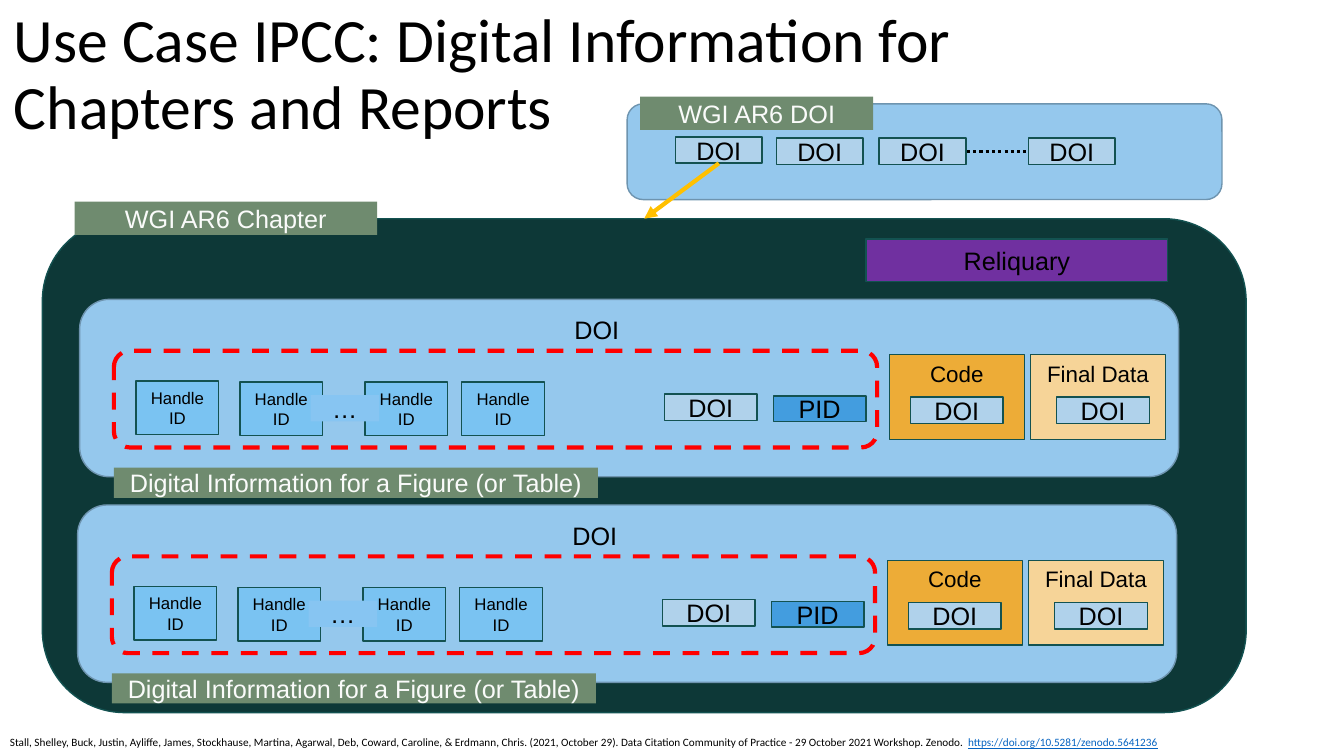
"""Build the slide on digital information for IPCC chapters and reports."""
from dataclasses import dataclass

from lxml.etree import SubElement
from pptx import Presentation
from pptx.dml.color import RGBColor
from pptx.enum.dml import MSO_LINE_DASH_STYLE as Dash
from pptx.enum.shapes import MSO_CONNECTOR, MSO_SHAPE
from pptx.enum.text import MSO_ANCHOR as Anchor, PP_ALIGN as Align
from pptx.oxml.ns import qn
from pptx.util import Inches, Pt

COLORS = {
    "black": "000000",
    "label_text": "FAFBFA",
    "label": "6F8B6F",
    "chapter": "0D3837",
    "edge": "135251",
    "panel": "95C8ED",
    "panel_edge": "6E94AF",
    "doi": "B0D2EB",
    "pid": "439DDF",
    "handle": "7AC3F2",
    "ellipsis": "87C5F2",
    "code": "EDAC37",
    "data": "F6D498",
    "reliquary": "7030A0",
    "dashed": "FF0000",
    "arrow": "FFC000",
    "link": "0563C1",
}


@dataclass(frozen=True)
class Box:
    left: float
    top: float
    width: float
    height: float
    fill: str | None
    text: str = ""
    edge: str | None = "edge"
    size: float = 18
    color: str = "black"
    rounded: bool = False
    anchor: Anchor = Anchor.MIDDLE
    dashed: bool = False


def rgb(name: str) -> RGBColor:
    return RGBColor.from_string(COLORS[name])


def add_span(para, text: str, *, size: float, font: str = "Arial",
             color: str = "black", underline: bool = False) -> None:
    span = para.add_run()
    span.text = text
    span.font.size = Pt(size)
    span.font.name = font
    span.font.color.rgb = rgb(color)
    if underline:
        span.font.underline = True


def draw_box(page, box: Box, dx: float = 0, dy: float = 0) -> None:
    kind = MSO_SHAPE.ROUNDED_RECTANGLE if box.rounded else MSO_SHAPE.RECTANGLE
    shape = page.shapes.add_shape(kind, Inches(box.left + dx), Inches(box.top + dy),
                                  Inches(box.width), Inches(box.height))
    shape.shadow.inherit = False
    if box.fill:
        shape.fill.solid()
        shape.fill.fore_color.rgb = rgb(box.fill)
    else:
        shape.fill.background()
    if box.edge:
        shape.line.color.rgb = rgb(box.edge)
        shape.line.width = Pt(3 if box.dashed else 1)
        if box.dashed:
            shape.line.dash_style = Dash.DASH
    else:
        shape.line.fill.background()
    if box.text:
        frame = shape.text_frame
        frame.word_wrap = True
        frame.vertical_anchor = box.anchor
        para = frame.paragraphs[0]
        para.alignment = Align.CENTER
        add_span(para, box.text, size=box.size, color=box.color)


def draw_line(page, start: tuple[float, float], end: tuple[float, float], color: str,
              width: float, *, dotted: bool = False, arrow: bool = False) -> None:
    line = page.shapes.add_connector(MSO_CONNECTOR.STRAIGHT,
                                     *map(Inches, start), *map(Inches, end))
    line.line.color.rgb = rgb(color)
    line.line.width = Pt(width)
    if dotted:
        line.line.dash_style = Dash.ROUND_DOT
    if arrow:
        SubElement(line.line._get_or_add_ln(), qn("a:tailEnd"), type="triangle")
    SubElement(line._element.spPr, qn("a:effectLst"))


def add_text_box(page, left: float, top: float, width: float, height: float,
                 anchor: Anchor = Anchor.TOP):
    box = page.shapes.add_textbox(Inches(left), Inches(top), Inches(width), Inches(height))
    box.text_frame.word_wrap = True
    box.text_frame.vertical_anchor = anchor
    return box.text_frame.paragraphs[0]


def label(left: float, top: float, width: float, height: float, text: str) -> Box:
    return Box(left, top, width, height, "label", text, edge=None, color="label_text")


def panel(left: float, top: float, width: float, height: float) -> Box:
    return Box(left, top, width, height, "panel", edge="panel_edge", rounded=True)


def doi(left: float, top: float, width: float = 0.92) -> Box:
    return Box(left, top, width, 0.26, "doi", "DOI")


def handle(left: float, top: float = 3.79) -> Box:
    return Box(left, top, 0.82, 0.53, "handle", "Handle ID", size=12)


def product(left: float, fill: str, text: str) -> Box:
    return Box(left, 3.52, 1.34, 0.84, fill, text, size=16, anchor=Anchor.TOP)


CHAPTER = Box(0.42, 2.17, 11.94, 4.9, "chapter", rounded=True)
CHAPTER_LABEL = label(0.74, 2, 3, 0.33, "WGI AR6 Chapter")
RELIQUARY = Box(8.59, 2.37, 2.99, 0.42, "reliquary", "Reliquary")

FIGURE_PANEL = [
    panel(0.79, 2.97, 10.9, 1.76),
    label(1.13, 4.64, 4.8, 0.3, "Digital Information for a Figure (or Table)"),
    product(8.82, "code", "Code"),
    product(10.22, "data", "Final Data"),
    doi(9.03, 3.94),
    doi(10.48, 3.94),
    doi(6.59, 3.91),
    Box(7.67, 3.93, 0.92, 0.25, "pid", "PID"),
    handle(1.35, 3.78),
    *map(handle, (2.38, 3.62, 4.58)),
    Box(3.08, 3.92, 0.68, 0.26, "ellipsis", "…", edge=None),
    Box(1.13, 3.48, 7.57, 0.96, None, edge="dashed", rounded=True, dashed=True),
    Box(5.41, 3.11, 1.02, 0.32, "panel", "DOI", edge=None, rounded=True),
]
PANEL_OFFSETS = [(0, 0), (-0.02, 2.04)]

REPORT = [
    panel(6.22, 1.03, 5.9, 0.95),
    doi(6.7, 1.36, 0.86),
    *(doi(left, 1.37, 0.86) for left in (7.7, 8.72, 10.2)),
    label(6.35, 0.96, 2.31, 0.33, "WGI AR6 DOI"),
]

CITATION = (
    "Stall, Shelley, Buck, Justin, Ayliffe, James, Stockhause, Martina, Agarwal, Deb, "
    "Coward, Caroline, & Erdmann, Chris. (2021, October 29). Data Citation Community of "
    "Practice - 29 October 2021 Workshop. Zenodo. "
)


def main() -> None:
    deck = Presentation()
    deck.slide_width, deck.slide_height = Inches(13.33), Inches(7.5)
    page = deck.slides.add_slide(deck.slide_layouts[6])

    title = add_text_box(page, 0.04, 0.03, 11.5, 1.45, Anchor.MIDDLE)
    title.line_spacing = 0.9
    add_span(title, "Use Case IPCC: Digital Information for Chapters and Reports",
             size=44, font="Calibri")

    draw_box(page, CHAPTER)
    for dx, dy in PANEL_OFFSETS:
        for box in FIGURE_PANEL:
            draw_box(page, box, dx, dy)
    for box in [*REPORT, RELIQUARY, CHAPTER_LABEL]:
        draw_box(page, box)
    draw_line(page, (7.13, 1.62), (6.39, 2.17), "arrow", 3, arrow=True)
    draw_line(page, (9.59, 1.5), (10.2, 1.5), "black", 2.25, dotted=True)

    source = add_text_box(page, 0, 7.25, 12.36, 0.24)
    add_span(source, CITATION, size=8, font="Calibri")
    add_span(source, "https://doi.org/10.5281/zenodo.5641236", size=8, font="Calibri",
             color="link", underline=True)
    deck.save("out.pptx")


if __name__ == "__main__":
    main()
